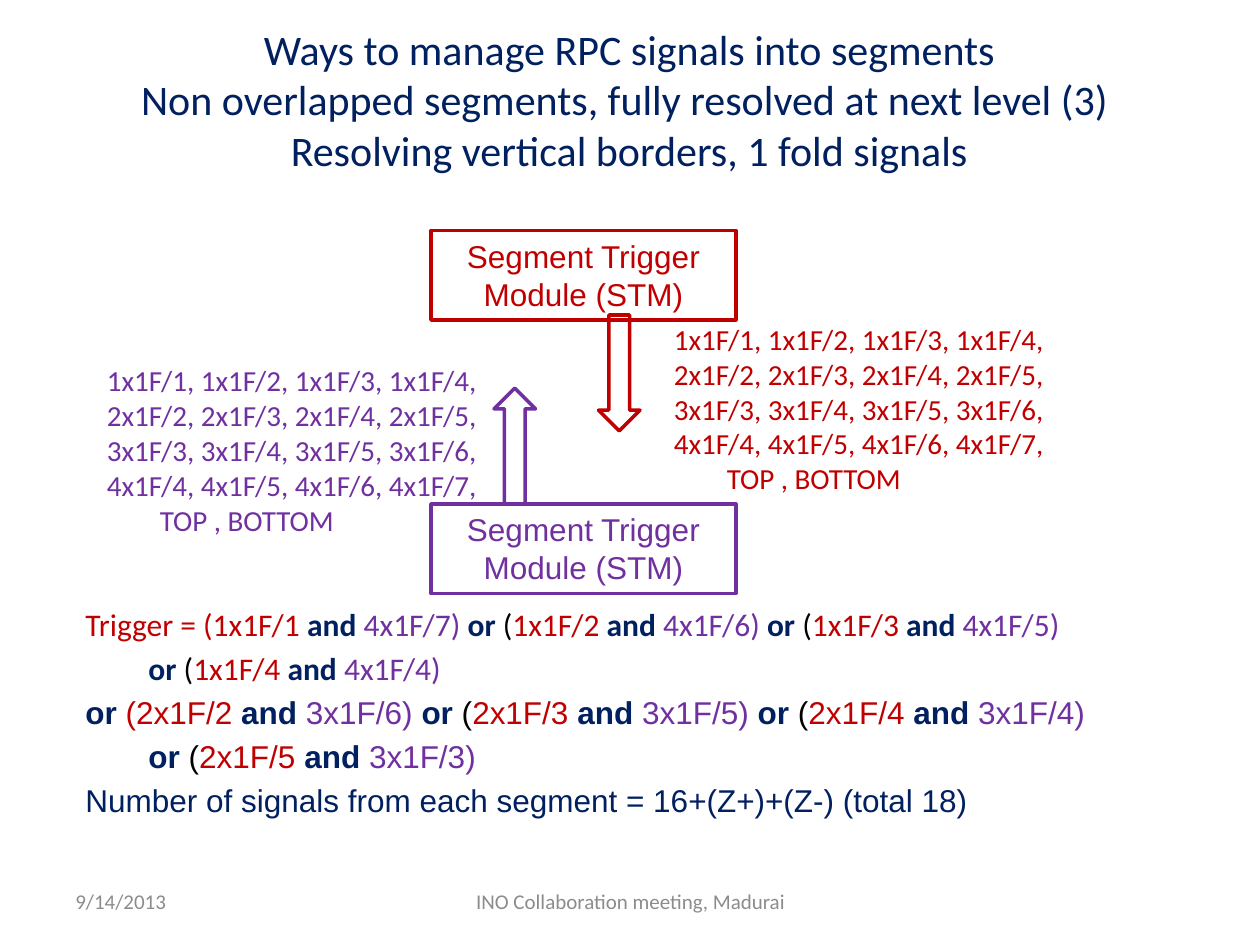
from pptx import Presentation
from pptx.dml.color import RGBColor
from pptx.enum.shapes import MSO_SHAPE as Shape
from pptx.enum.text import MSO_ANCHOR as Anchor, PP_ALIGN as Align
from pptx.util import Inches, Pt

NAVY, RED, PURPLE, BLACK, GREY = "002060", "C00000", "7030A0", "000000", "8C8C8C"


def style(font, size, name, color, bold=False):
    font.size, font.name, font.bold = Pt(size), name, bold
    font.color.rgb = RGBColor.from_string(color)


def add_text(page, left, top, width, height):
    box = page.shapes.add_textbox(Inches(left), Inches(top), Inches(width), Inches(height))
    box.text_frame.word_wrap = True
    return box.text_frame


deck = Presentation()
deck.slide_width, deck.slide_height = Inches(10), Inches(7.5)
page = deck.slides.add_slide(deck.slide_layouts[5])

# Title
title = page.shapes.title
title.left, title.top, title.width, title.height = map(Inches, (0.33, 0.13, 9.33, 1.31))
title.text_frame.text = (
    "Ways to manage RPC signals into segments\v"
    "Non overlapped segments, fully resolved at next level (3) \v"
    "Resolving vertical borders, 1 fold signals"
)
title.text_frame.vertical_anchor = Anchor.MIDDLE
para = title.text_frame.paragraphs[0]
para.alignment = Align.CENTER
style(para.font, 24, "Calibri", NAVY)

# Date and footer
for left, width, align, words in (
    (0.5, 2.33, Align.LEFT, "9/14/2013"),
    (3.42, 3.17, Align.CENTER, "INO Collaboration meeting, Madurai"),
):
    frame = add_text(page, left, 6.95, width, 0.4)
    frame.text = words
    frame.vertical_anchor = Anchor.MIDDLE
    frame.paragraphs[0].alignment = align
    style(frame.paragraphs[0].font, 12, "Calibri", GREY)

# Trigger modules
for top, color in ((1.83, RED), (4, PURPLE)):
    module = page.shapes.add_shape(
        Shape.RECTANGLE, Inches(3.42), Inches(top), Inches(2.42), Inches(0.71))
    module.shadow.inherit = False
    module.fill.solid()
    module.fill.fore_color.rgb = RGBColor.from_string("FFFFFF")
    module.line.color.rgb = RGBColor.from_string(color)
    module.line.width = Pt(2)
    module.text_frame.text = "Segment Trigger Module (STM)"
    module.text_frame.vertical_anchor = Anchor.TOP
    para = module.text_frame.paragraphs[0]
    para.alignment = Align.CENTER
    style(para.font, 18, "Arial", color)

# Signal lists: row n holds nx1F/n to nx1F/(n+3)
signals = "\v".join(
    " ".join(f"{row}x1F/{row + step}," for step in range(4)) for row in range(1, 5))
for left, top, color in ((5.25, 2.5, RED), (0.75, 2.83, PURPLE)):
    frame = add_text(page, left, top, 3.42, 1.42)
    frame.text = signals + "\nTOP , BOTTOM"
    for para in frame.paragraphs:
        style(para.font, 16.6, "Calibri", color)
    indented = frame.paragraphs[1]._p.get_or_add_pPr()
    indented.set("marL", str(Inches(0.42)))
    indented.set("indent", "0")

# Arrows between the modules
for left, top, turn, color in ((4.75, 2.5, 0, RED), (3.92, 3.08, 180, PURPLE)):
    arrow = page.shapes.add_shape(
        Shape.DOWN_ARROW, Inches(left), Inches(top), Inches(0.33), Inches(0.92))
    arrow.rotation = turn
    arrow.shadow.inherit = False
    arrow.fill.background()
    arrow.line.color.rgb = RGBColor.from_string(color)
    arrow.line.width = Pt(2)

# Trigger equation: four pairs per row, the last on its own line
frame = add_text(page, 0.58, 4.75, 9.25, 2.17)
para = frame.paragraphs[0]
for row, font_name, opening in (
    (1, "Calibri", [("Trigger = (", RED)]),
    (2, "Arial", [("or ", NAVY), ("(", RED)]),
):
    partner = 5 - row
    for step in range(4):
        if step == 0:
            spans = list(opening)
        else:
            spans = [("or", NAVY), (" (", BLACK)]
        if step == 3:
            spans.insert(0, ("\t", NAVY))
        ending = ")" if step >= 2 else ") "
        spans += [
            (f"{row}x1F/{row + step} ", RED),
            ("and ", NAVY),
            (f"{partner}x1F/{partner + 3 - step}{ending}", PURPLE),
        ]
        if step == 3:
            para = frame.add_paragraph()
            para.space_before = Pt(3.6)
        for words, color in spans:
            span = para.add_run()
            span.text = words
            style(span.font, 18, font_name, color, bold=color == NAVY)
    para = frame.add_paragraph()
    para.space_before = Pt(3.6)

# Signal count
para.text = "Number of signals from each segment = 16+(Z+)+(Z-) (total 18)"
style(para.font, 18, "Arial", NAVY)

deck.save("out.pptx")
